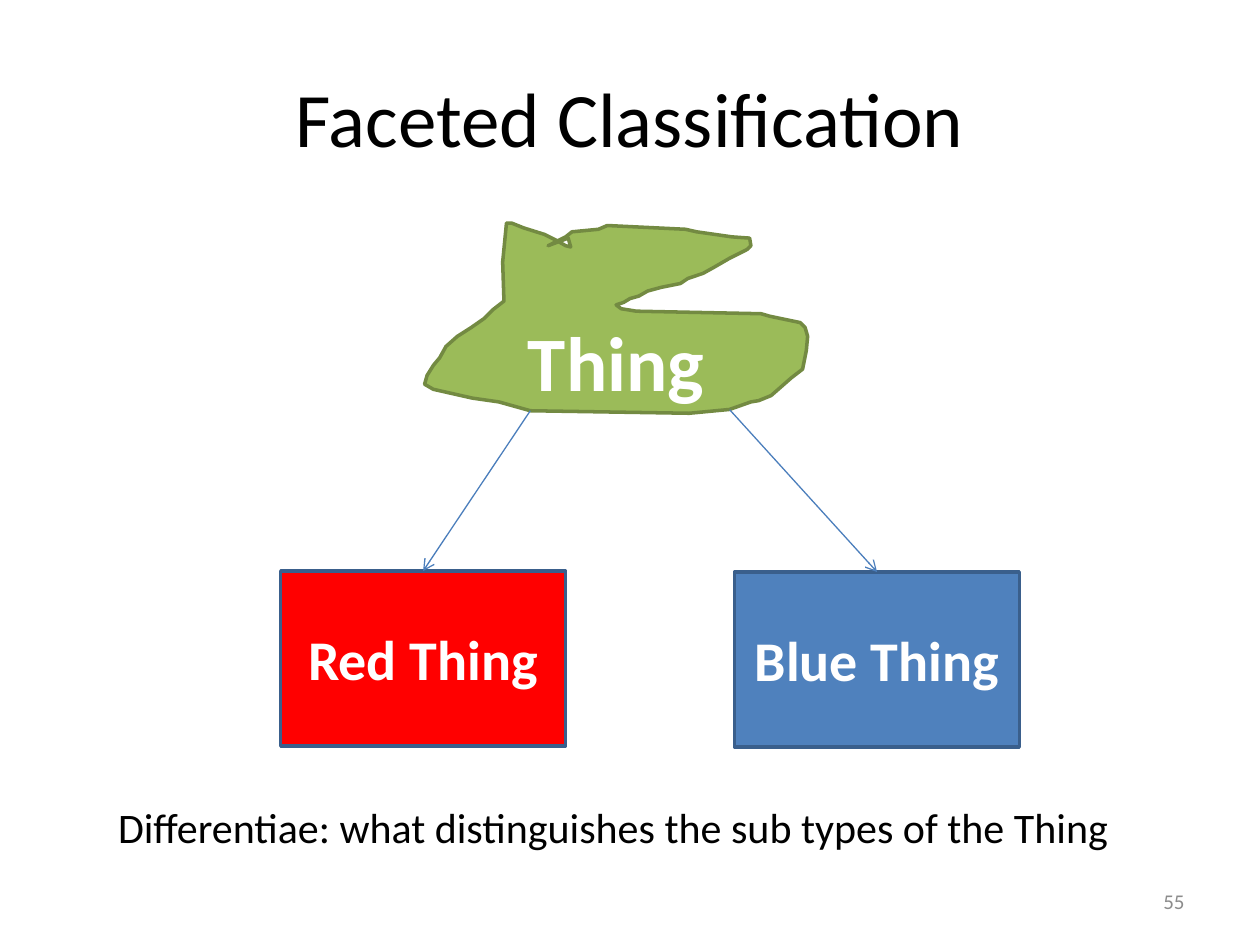
"""Build the Faceted Classification slide."""
from lxml import etree
from pptx import Presentation
from pptx.dml.color import RGBColor
from pptx.enum.shapes import MSO_CONNECTOR, MSO_SHAPE
from pptx.enum.text import MSO_ANCHOR, MSO_AUTO_SIZE, PP_ALIGN
from pptx.oxml.ns import qn
from pptx.util import Cm, Pt

STRAIGHT, RECTANGLE = MSO_CONNECTOR.STRAIGHT, MSO_SHAPE.RECTANGLE
TOP, MIDDLE, BOTTOM = MSO_ANCHOR.TOP, MSO_ANCHOR.MIDDLE, MSO_ANCHOR.BOTTOM
LEFT, CENTER, RIGHT = PP_ALIGN.LEFT, PP_ALIGN.CENTER, PP_ALIGN.RIGHT
FIT_SHAPE = MSO_AUTO_SIZE.SHAPE_TO_FIT_TEXT
TOP_SITE = 0

THEME = {
    "font": "Calibri",
    "ink": "000000", "light": "FFFFFF", "muted": "8C8C8C",
    "thing": "9BBB59", "thing_edge": "738A42",
    "red": "FF0000", "blue": "4F81BD", "box_edge": "3A5F8C", "arrow": "4B7EBC",
    "heading": 44, "label": 32, "note": 24, "number": 12,
    "edge_width": 2, "arrow_width": 0.75,
}


def write(shape, text, size, color, bold=False, align=CENTER, anchor=MIDDLE, wrap=True):
    frame = shape.text_frame
    frame.word_wrap, frame.vertical_anchor = wrap, anchor
    para = frame.paragraphs[0]
    para.alignment = align
    span = para.add_run()
    span.text = text
    values = {"name": THEME["font"], "size": Pt(THEME[size]), "bold": bold}
    for name, value in values.items():
        setattr(span.font, name, value)
    span.font.color.rgb = RGBColor.from_string(THEME[color])


def paint(shape, fill, edge):
    shape.shadow.inherit = False
    shape.fill.solid()
    shape.fill.fore_color.rgb = RGBColor.from_string(THEME[fill])
    shape.line.color.rgb = RGBColor.from_string(THEME[edge])
    shape.line.width = Pt(THEME["edge_width"])


deck = Presentation()
deck.slide_width, deck.slide_height = Cm(25.4), Cm(19.05)
page = deck.slides.add_slide(deck.slide_layouts[5])

title = page.shapes.title
frame_values = {"left": Cm(1.27), "top": Cm(0.76), "width": Cm(22.86), "height": Cm(3.18)}
for name, value in frame_values.items():
    setattr(title, name, value)
write(title, "Faceted Classification", "heading", "ink")

OUTLINE_UNIT = Cm(0.0254)
outline = [
    (435, 195), (449, 188), (454, 184), (475, 182), (482, 179), (544, 182), (553, 184),
    (581, 188), (595, 189), (596, 195), (593, 198), (579, 205), (567, 212), (558, 217),
    (546, 221), (540, 225), (525, 228), (514, 231), (507, 235), (500, 237), (495, 240),
    (489, 242), (493, 245), (505, 247), (604, 249), (611, 251), (635, 256), (639, 260),
    (641, 267), (640, 278), (637, 293), (628, 300), (612, 314), (602, 318), (596, 319),
    (579, 325), (547, 328), (421, 326), (396, 319), (375, 316), (344, 309), (337, 305),
    (339, 298), (344, 290), (349, 284), (354, 275), (363, 267), (374, 260), (384, 253),
    (391, 246), (400, 239), (399, 208), (402, 177), (406, 177), (416, 181), (432, 186),
    (442, 191), (449, 195), (453, 196), (451, 189),
]
builder = page.shapes.build_freeform(*outline[0], scale=OUTLINE_UNIT)
builder.add_line_segments(outline[1:], close=True)
thing = builder.convert_to_shape()
paint(thing, "thing", "thing_edge")
write(thing, "Thing", "heading", "light", bold=True, anchor=BOTTOM)

subtypes = [
    ("Red Thing", "red", 5.66, 11.51, (10.69, 8.28)),
    ("Blue Thing", "blue", 14.81, 11.53, (14.71, 8.26)),
]
for text, fill, left, top, (start_x, start_y) in subtypes:
    box = page.shapes.add_shape(RECTANGLE, Cm(left), Cm(top), Cm(5.74), Cm(3.53))
    paint(box, fill, "box_edge")
    write(box, text, "label", "light", bold=True)

    arrow = page.shapes.add_connector(STRAIGHT, Cm(start_x), Cm(start_y), Cm(left), Cm(top))
    arrow.end_connect(box, TOP_SITE)
    arrow.line.color.rgb = RGBColor.from_string(THEME["arrow"])
    arrow.line.width = Pt(THEME["arrow_width"])
    etree.SubElement(arrow.line._get_or_add_ln(), qn("a:tailEnd"), type="arrow")
    etree.SubElement(arrow._element.spPr, qn("a:effectLst"))

note = page.shapes.add_textbox(Cm(2.13), Cm(16.03), Cm(21.21), Cm(1.27))
write(note, "Differentiae: what distinguishes the sub types of the Thing",
      "note", "ink", align=LEFT, anchor=TOP, wrap=False)
note.text_frame.auto_size = FIT_SHAPE

number = page.shapes.add_textbox(Cm(18.21), Cm(17.65), Cm(5.92), Cm(1.02))
write(number, "55", "number", "muted", align=RIGHT)

deck.save("out.pptx")
